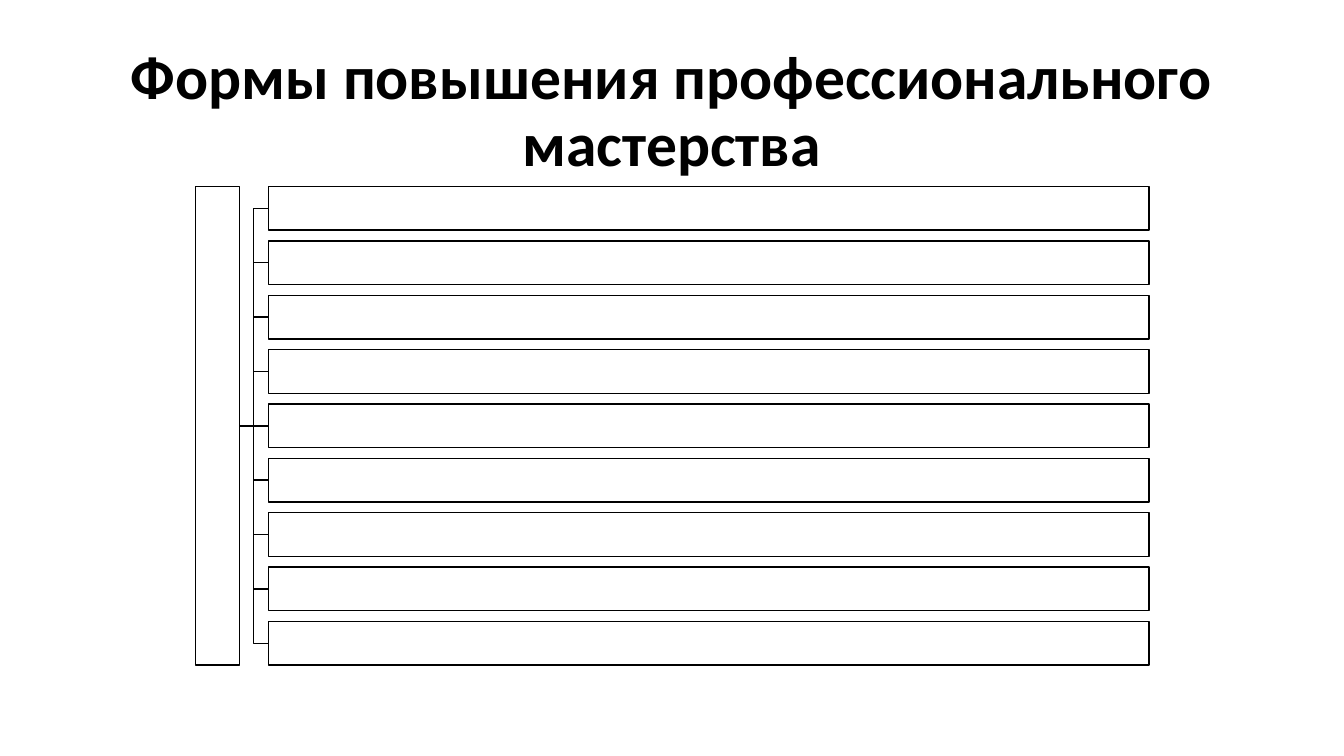
from lxml import etree
from pptx import Presentation
from pptx.dml.color import RGBColor
from pptx.enum.shapes import MSO_CONNECTOR, MSO_SHAPE
from pptx.enum.text import MSO_ANCHOR, PP_ALIGN
from pptx.oxml.ns import qn
from pptx.util import Cm, Pt

BLACK = RGBColor(0x00, 0x00, 0x00)
WHITE = RGBColor(0xFF, 0xFF, 0xFF)
RECTANGLE = MSO_SHAPE.RECTANGLE
ELBOW = MSO_CONNECTOR.ELBOW
STRAIGHT = MSO_CONNECTOR.STRAIGHT
MIDDLE = MSO_ANCHOR.MIDDLE
CENTER = PP_ALIGN.CENTER

FORM_COUNT = 9
TOP = 4.7
PITCH = 1.37
BAR = 1.1
TRUNK_LEFT = 4.93
FORM_LEFT = 6.76
FORM_WIDTH = 22.2
TRUNK_HEIGHT = (FORM_COUNT - 1) * PITCH + BAR
TRUNK_RIGHT = TRUNK_LEFT + BAR
HUB = FORM_COUNT // 2

presentation = Presentation()
presentation.slide_width = Cm(33.87)
presentation.slide_height = Cm(19.05)
slide = presentation.slides.add_slide(presentation.slide_layouts[6])

heading = slide.shapes.add_textbox(Cm(2.33), Cm(1.01), Cm(29.21), Cm(3.68)).text_frame
heading.word_wrap = True
heading.vertical_anchor = MIDDLE
heading_line = heading.paragraphs[0]
heading_line.text = "Формы повышения профессионального мастерства"
heading_line.alignment = CENTER
heading_line.line_spacing = 0.9
heading_format = {"name": "Calibri", "size": Pt(44), "bold": True}
for attribute, value in heading_format.items():
    setattr(heading_line.runs[0].font, attribute, value)
heading_line.runs[0].font.color.rgb = BLACK

centers = [TOP + BAR / 2 + row * PITCH for row in range(FORM_COUNT)]

for row, center in enumerate(centers):
    branch = slide.shapes.add_connector(
        STRAIGHT if row == HUB else ELBOW,
        Cm(TRUNK_RIGHT), Cm(centers[HUB]), Cm(FORM_LEFT), Cm(center),
    )
    branch.line.color.rgb = BLACK
    branch.line.width = Pt(1)
    etree.SubElement(branch._element.spPr, qn("a:effectLst"))

boxes = [(TRUNK_LEFT, TOP, BAR, TRUNK_HEIGHT)]
boxes += [(FORM_LEFT, center - BAR / 2, FORM_WIDTH, BAR) for center in centers]

for box in boxes:
    form = slide.shapes.add_shape(RECTANGLE, *map(Cm, box))
    form.shadow.inherit = False
    form.fill.solid()
    form.fill.fore_color.rgb = WHITE
    form.line.color.rgb = BLACK
    form.line.width = Pt(1)

presentation.save("out.pptx")
